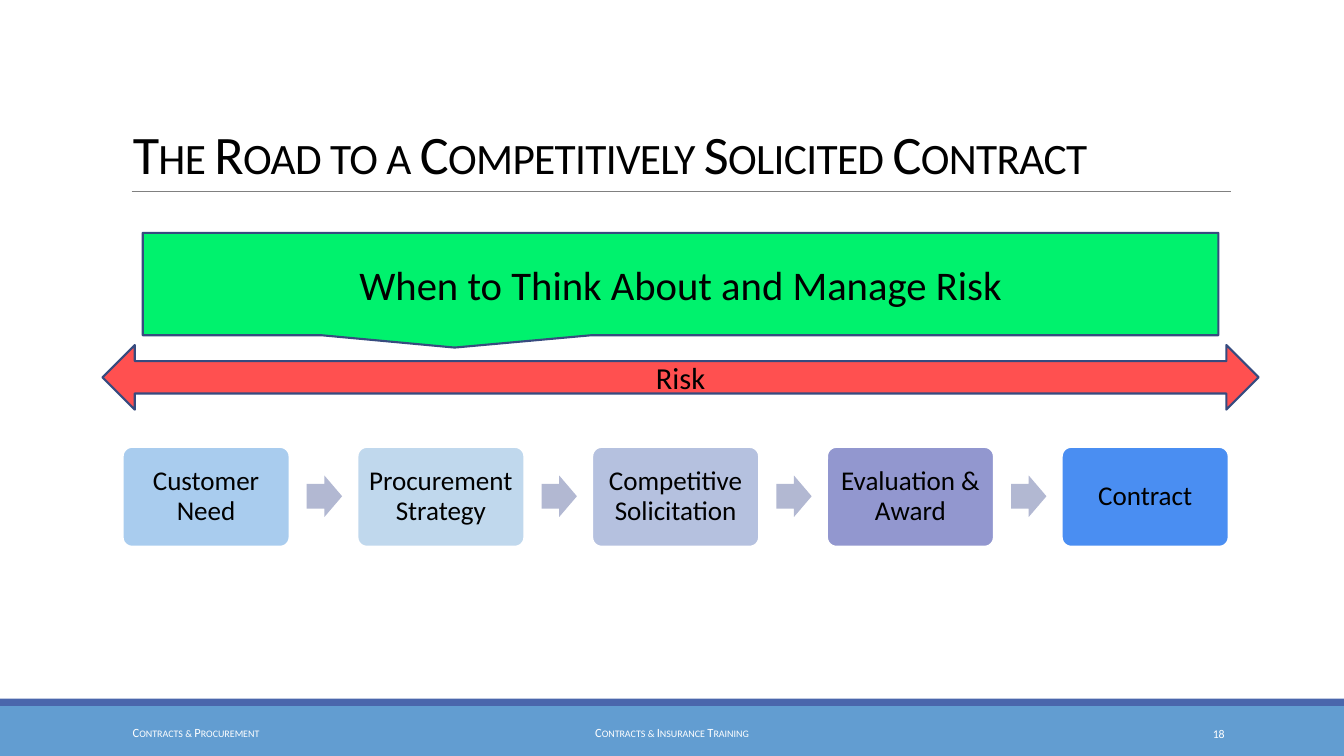
from lxml import etree
from pptx import Presentation
from pptx.dml.color import RGBColor
from pptx.enum.shapes import MSO_CONNECTOR as Link, MSO_SHAPE as Kind
from pptx.enum.text import MSO_ANCHOR as Anchor, PP_ALIGN as Align
from pptx.oxml.ns import qn
from pptx.util import Inches, Pt

INK = {
    "text": "000000", "white": "FFFFFF", "rule": "808080",
    "foot": "629DD1", "band": "4A66AC", "edge": "374B7F",
    "risk": "FF5050", "call": "00F26D", "arrow": "B2B8D2",
}
STEPS = {
    "Customer Need": "A9CCEE",
    "Procurement Strategy": "C0D8ED",
    "Competitive Solicitation": "B5C1DF",
    "Evaluation & Award": "9297CF",
    "Contract": "4A8EF2",
}


def write(shape, text, size, color="text", align=Align.CENTER,
          anchor=Anchor.MIDDLE, lead=None, small=False, track=None):
    frame = shape.text_frame
    frame.word_wrap = True
    frame.vertical_anchor = anchor
    para = frame.paragraphs[0]
    para.alignment = align
    if lead:
        para.line_spacing = lead
    run = para.add_run()
    run.text = text
    para.font.name = "Calibri"
    para.font.size = Pt(size)
    para.font.color.rgb = RGBColor.from_string(INK[color])
    props = run._r.get_or_add_rPr()
    if small:
        props.set("cap", "small")
    if track:
        props.set("spc", str(track))


def add_text(slide, box, text, size, **style):
    shape = slide.shapes.add_textbox(*map(Inches, box))
    write(shape, text, size, **style)


def add_block(slide, kind, box, fill, edge=None, width=1.25, adjust=()):
    shape = slide.shapes.add_shape(kind, *map(Inches, box))
    shape.shadow.inherit = False
    shape.fill.solid()
    shape.fill.fore_color.rgb = RGBColor.from_string(fill)
    if edge:
        shape.line.color.rgb = RGBColor.from_string(INK[edge])
        shape.line.width = Pt(width)
    else:
        shape.line.fill.background()
    for i, value in enumerate(adjust):
        shape.adjustments[i] = value
    return shape


def add_rule(slide, left, right, top):
    rule = slide.shapes.add_connector(
        Link.STRAIGHT, Inches(left), Inches(top), Inches(right), Inches(top))
    rule.line.color.rgb = RGBColor.from_string(INK["rule"])
    rule.line.width = Pt(0.5)
    etree.SubElement(rule._element.spPr, qn("a:effectLst"))


def add_steps(slide):
    pitch = 1.925
    for i, (name, fill) in enumerate(STEPS.items()):
        left = 1 + i * pitch
        if i:
            add_block(slide, Kind.RIGHT_ARROW,
                      (left - 0.41, 3.9, 0.29, 0.34), INK["arrow"],
                      adjust=(0.6, 0.5))
        step = add_block(slide, Kind.ROUNDED_RECTANGLE,
                         (left, 3.66, 1.38, 0.83), fill, "white", 2, (0.1,))
        frame = step.text_frame
        frame.margin_left = frame.margin_right = Inches(0.07)
        write(step, name, 16, lead=0.9)


def add_foot(slide):
    add_block(slide, Kind.RECTANGLE, (0, 5.79, 11.02, 0.41), INK["foot"])
    add_block(slide, Kind.RECTANGLE, (0, 5.73, 11.02, 0.06), INK["band"])
    for left, width, text, size, align in (
            (0.99, 2.23, "Contracts & Procurement", 7.4, Align.LEFT),
            (4.2, 2.62, "Contracts & Insurance Training", 7.4, Align.CENTER),
            (8.95, 1.19, "18", 8.7, Align.RIGHT)):
        add_text(slide, (left, 5.84, width, 0.33), text, size,
                 color="white", align=align, small=True)


def main():
    deck = Presentation()
    deck.slide_width = Inches(11.02)
    deck.slide_height = Inches(6.2)
    slide = deck.slides.add_slide(deck.slide_layouts[6])
    add_foot(slide)
    add_rule(slide, 1.08, 10.09, 1.57)
    add_text(slide, (0.99, 0.26, 9.09, 1.31),
             "The Road to a Competitively Solicited Contract", 32,
             align=Align.LEFT, anchor=Anchor.BOTTOM, lead=0.85,
             small=True, track=-40)
    add_steps(slide)
    risk = add_block(slide, Kind.LEFT_RIGHT_ARROW,
                     (0.84, 2.83, 9.48, 0.53), INK["risk"], "edge")
    write(risk, "Risk", 18)
    call = add_block(slide, Kind.RECTANGULAR_CALLOUT,
                     (1.17, 1.91, 8.82, 0.84), INK["call"], "edge",
                     adjust=(-0.21, 0.62))
    write(call, "When to Think About and Manage Risk", 24)
    deck.save("out.pptx")


if __name__ == "__main__":
    main()
